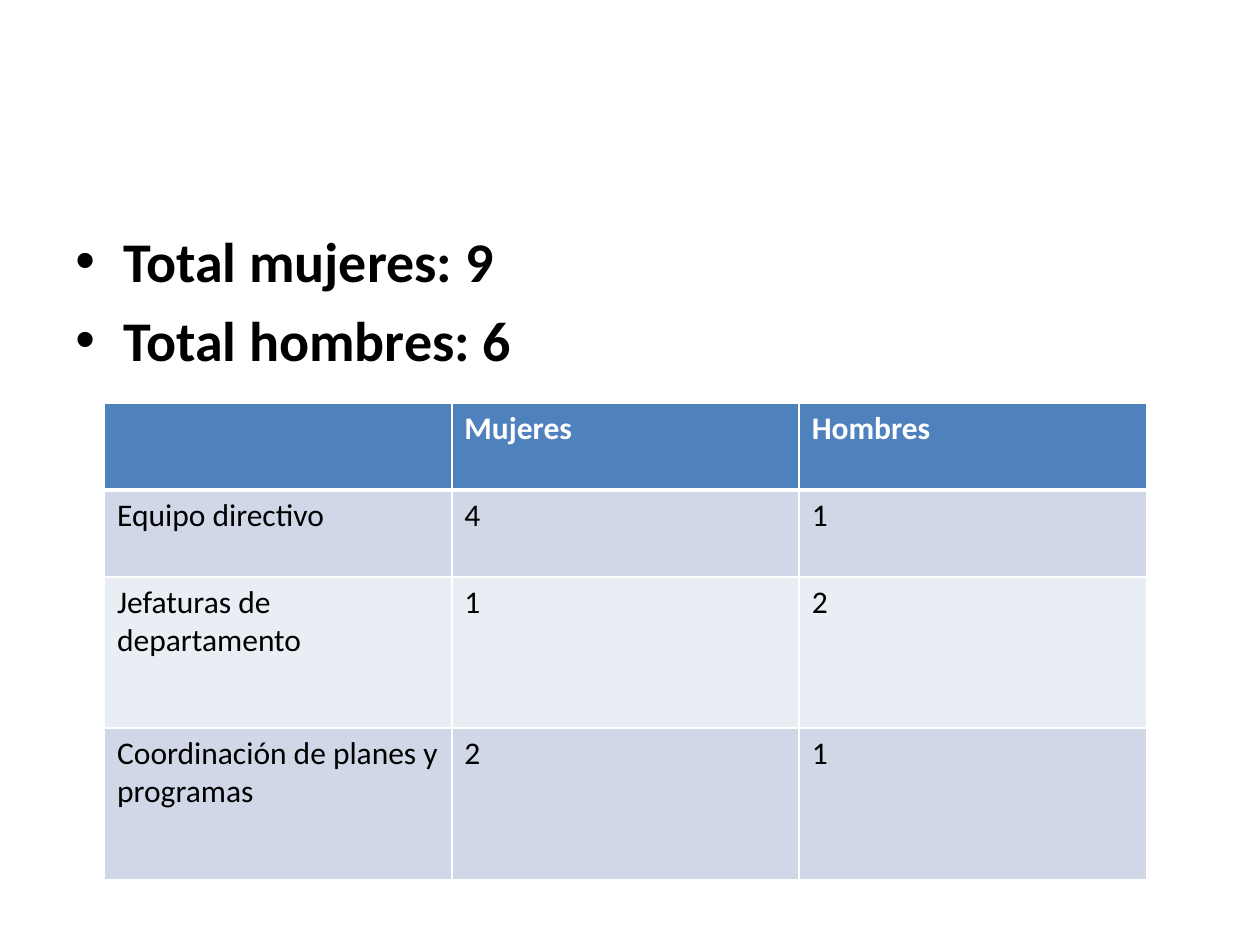
from dataclasses import dataclass

from lxml.etree import SubElement
from pptx import Presentation
from pptx.dml.color import RGBColor
from pptx.oxml import parse_xml
from pptx.oxml.ns import nsdecls, qn
from pptx.slide import Slide
from pptx.table import _Cell
from pptx.text.text import _Paragraph
from pptx.util import Inches, Pt


@dataclass(frozen=True)
class Theme:
    font: str = "Calibri"
    text: str = "000000"
    header_text: str = "FFFFFF"
    header_fill: str = "4F81BD"
    bands: tuple[str, str] = ("D0D8E8", "E9EDF4")
    border: str = "FFFFFF"
    border_width: float = 1
    header_rule: float = 3
    bullet_size: int = 32
    table_size: int = 18


@dataclass(frozen=True)
class Area:
    """Shares of the slide's width and height."""
    left: float
    top: float
    width: float
    height: float


@dataclass(frozen=True)
class StaffRow:
    labels: tuple[str, str, str]
    height: float


THEME = Theme()
SLIDE_WIDTH, SLIDE_HEIGHT = Inches(10), Inches(7.5)
TOTALS_AREA = Area(0.05, 1.75 / 7.5, 0.9, 0.66)
STAFF_AREA = Area(0.083, 3.2 / 7.5, 0.827, 3.78 / 7.5)
TOTALS = ("Total mujeres: 9", "Total hombres: 6")
STAFF = (
    StaffRow(("", "Mujeres", "Hombres"), 0.69),
    StaffRow(("Equipo directivo", "4", "1"), 0.69),
    StaffRow(("Jefaturas de departamento", "1", "2"), 1.2),
    StaffRow(("Coordinación de planes y programas", "2", "1"), 1.2),
)


def place(area: Area) -> tuple[int, int, int, int]:
    return (int(area.left * SLIDE_WIDTH), int(area.top * SLIDE_HEIGHT),
            int(area.width * SLIDE_WIDTH), int(area.height * SLIDE_HEIGHT))


def format_runs(paragraph: _Paragraph, size: int, color: str, bold: bool) -> None:
    for run in paragraph.runs:
        run.font.name = THEME.font
        run.font.size = Pt(size)
        run.font.bold = bold
        run.font.color.rgb = RGBColor.from_string(color)


def add_bullet(paragraph: _Paragraph) -> None:
    properties = paragraph._p.get_or_add_pPr()
    properties.set("marL", str(Inches(0.38)))
    properties.set("indent", str(-Inches(0.38)))
    SubElement(properties, qn("a:buFont")).set("typeface", "Arial")
    SubElement(properties, qn("a:buChar")).set("char", "•")


def draw_totals(slide: Slide) -> None:
    frame = slide.shapes.add_textbox(*place(TOTALS_AREA)).text_frame
    frame.word_wrap = True
    frame.text = "\n".join(TOTALS)
    for paragraph in frame.paragraphs:
        paragraph.space_before = Pt(0.2 * THEME.bullet_size)
        add_bullet(paragraph)
        format_runs(paragraph, THEME.bullet_size, THEME.text, True)


def set_borders(cell: _Cell, top: float, bottom: float) -> None:
    side = THEME.border_width
    properties = cell._tc.get_or_add_tcPr()
    edges = (("L", side), ("R", side), ("T", top), ("B", bottom))
    for position, (edge, width) in enumerate(edges):
        properties.insert(position, parse_xml(
            f'<a:ln{edge} {nsdecls("a")} w="{Pt(width)}"><a:solidFill>'
            f'<a:srgbClr val="{THEME.border}"/></a:solidFill></a:ln{edge}>'))


def draw_staff_table(slide: Slide) -> None:
    columns = len(STAFF[0].labels)
    table = slide.shapes.add_table(len(STAFF), columns, *place(STAFF_AREA)).table
    for index, staff in enumerate(STAFF):
        table.rows[index].height = Inches(staff.height)
        header = index == 0
        fill = THEME.header_fill if header else THEME.bands[(index - 1) % 2]
        color = THEME.header_text if header else THEME.text
        top = THEME.header_rule if index == 1 else THEME.border_width
        bottom = THEME.header_rule if header else THEME.border_width
        for column, label in enumerate(staff.labels):
            cell = table.cell(index, column)
            cell.text_frame.text = label
            format_runs(cell.text_frame.paragraphs[0], THEME.table_size, color, header)
            cell.fill.solid()
            cell.fill.fore_color.rgb = RGBColor.from_string(fill)
            set_borders(cell, top, bottom)


def main() -> None:
    presentation = Presentation()
    presentation.slide_width, presentation.slide_height = SLIDE_WIDTH, SLIDE_HEIGHT
    slide = presentation.slides.add_slide(presentation.slide_layouts[6])
    draw_totals(slide)
    draw_staff_table(slide)
    presentation.save("out.pptx")


if __name__ == "__main__":
    main()
